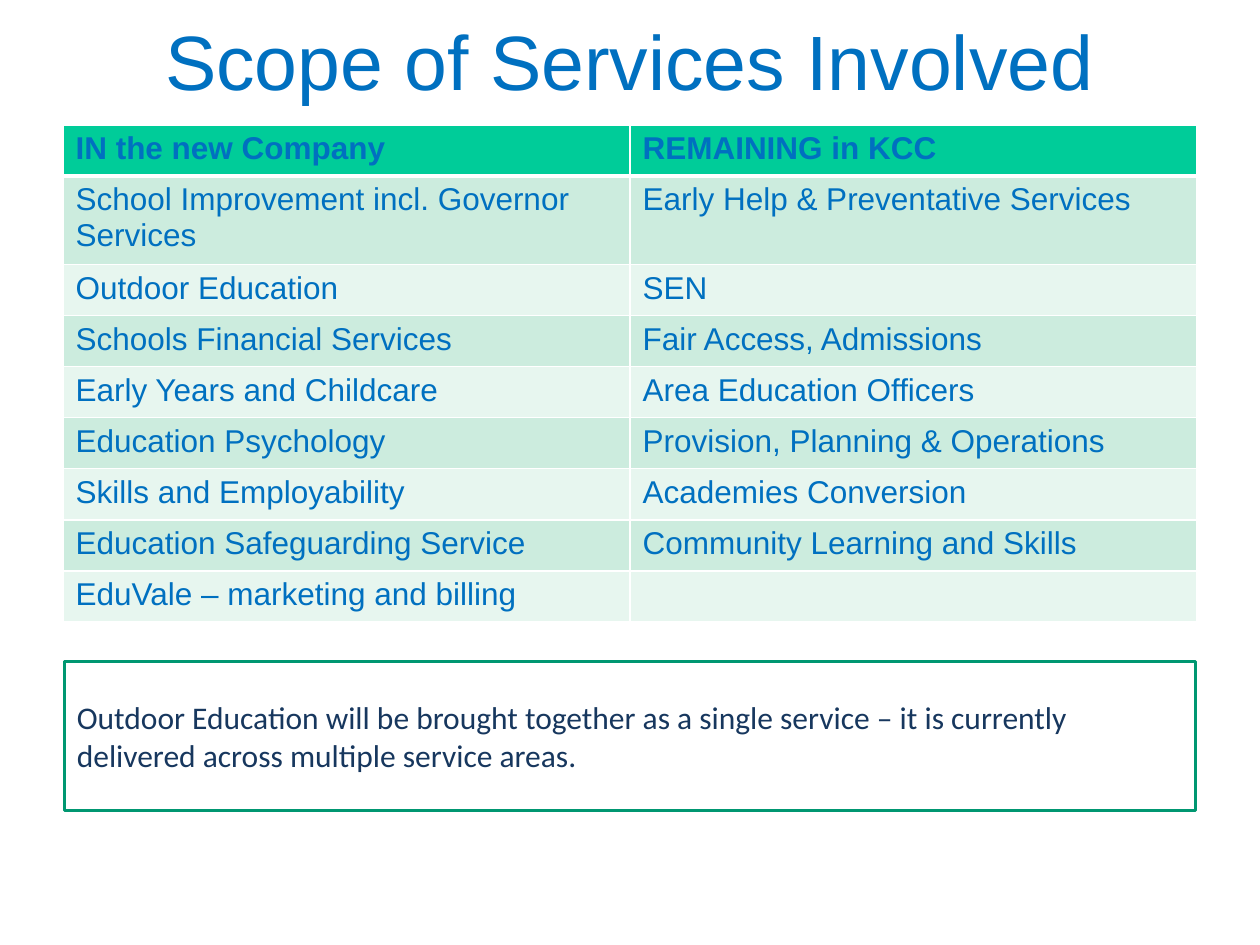
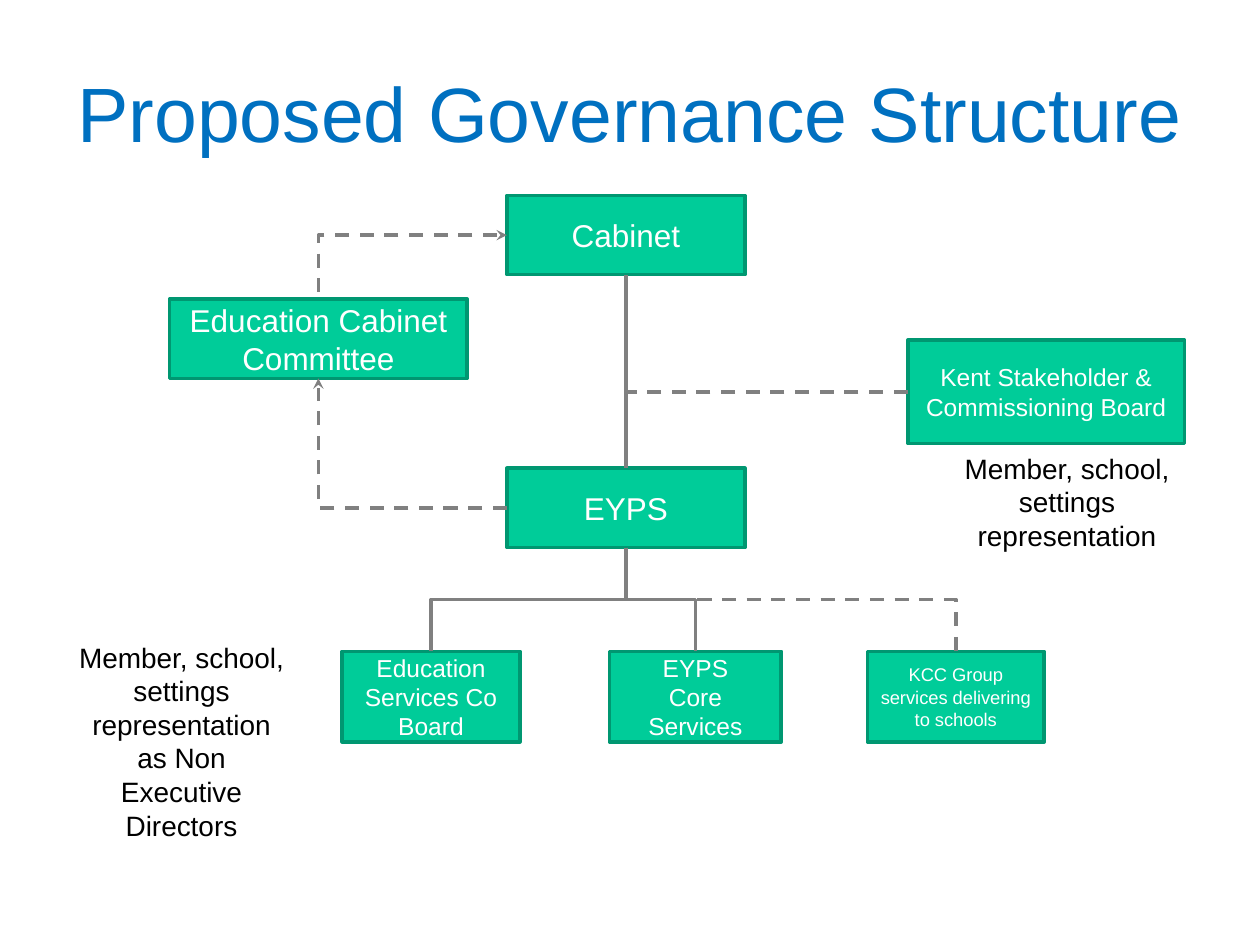
from lxml import etree
from pptx import Presentation
from pptx import util as u
from pptx.dml.color import RGBColor
from pptx.enum import dml, shapes, text
from pptx.oxml.ns import qn

rgb = RGBColor.from_string
BLUE, NAVY, BLACK, WHITE = "0070C0", "17375E", "000000", "FFFFFF"
GREEN, DARK_GREEN, GREY = "00CC99", "009771", "808080"
BANDS = ["CCECDE", "E7F6EF"]
LEFT, CENTRE = text.PP_ALIGN.LEFT, text.PP_ALIGN.CENTER
TOP, MIDDLE = text.MSO_ANCHOR.TOP, text.MSO_ANCHOR.MIDDLE


def write(frame, words, size=18, colour=BLUE, font="Arial", bold=False,
          align=CENTRE, anchor=MIDDLE, spacing=None):
    frame.word_wrap = True
    frame.vertical_anchor = anchor
    for number, line in enumerate(words.split("\n")):
        para = frame.add_paragraph() if number else frame.paragraphs[0]
        para.alignment = align
        para.line_spacing = spacing
        span = para.add_run()
        span.text = line
        span.font.name, span.font.size, span.font.bold = font, u.Pt(size), bold
        span.font.color.rgb = rgb(colour)


def add_box(page, left, top, width, height, fill=None):
    box = page.shapes.add_shape(shapes.MSO_SHAPE.RECTANGLE, u.Cm(left), u.Cm(top),
                                u.Cm(width), u.Cm(height))
    box.shadow.inherit = False
    if fill:
        box.fill.solid()
        box.fill.fore_color.rgb = rgb(fill)
    else:
        box.fill.background()
    box.line.color.rgb = rgb(DARK_GREEN)
    box.line.width = u.Pt(2)
    return box


deck = Presentation()
deck.slide_width, deck.slide_height = u.Cm(25.4), u.Cm(19.05)

# Pages and titles
pages = []
for title, top in [("Scope of Services Involved", -0.28),
                   ("Proposed Governance Structure", 0.76)]:
    page = deck.slides.add_slide(deck.slide_layouts[6])
    box = page.shapes.add_textbox(u.Cm(1.27), u.Cm(top), u.Cm(22.86), u.Cm(3.18))
    write(box.text_frame, title, size=44, spacing=0.93)
    pages.append(page)
scope_page, governance_page = pages

# Services table
services = [
    ("IN the new Company", "REMAINING in KCC"),
    ("School Improvement incl. Governor Services", "Early Help & Preventative Services"),
    ("Outdoor Education", "SEN"),
    ("Schools Financial Services", "Fair Access, Admissions"),
    ("Early Years and Childcare", "Area Education Officers"),
    ("Education Psychology", "Provision, Planning & Operations"),
    ("Skills and Employability", "Academies Conversion"),
    ("Education Safeguarding Service", "Community Learning and Skills"),
    ("EduVale – marketing and billing", ""),
]
table = scope_page.shapes.add_table(len(services), 2, u.Cm(1.27), u.Cm(2.52),
                                    u.Cm(22.86), u.Cm(1.03 * len(services))).table
table.horz_banding = False
for row, names in enumerate(services):
    header = row == 0
    for column, name in enumerate(names):
        cell = table.cell(row, column)
        if name:
            write(cell.text_frame, name, bold=header, align=LEFT, anchor=TOP)
        # White borders, heavier between header and body
        for side in "LRTB":
            heavy = (header and side == "B") or (row == 1 and side == "T")
            border = etree.SubElement(cell._tc.get_or_add_tcPr(), qn("a:ln" + side),
                                      w=str(u.Pt(3 if heavy else 1)))
            paint = etree.SubElement(border, qn("a:solidFill"))
            etree.SubElement(paint, qn("a:srgbClr"), val=WHITE)
        cell.fill.solid()
        cell.fill.fore_color.rgb = rgb(GREEN if header else BANDS[(row - 1) % 2])

# Note below the table
note = add_box(scope_page, 1.3, 13.34, 22.8, 3)
write(note.text_frame, "Outdoor Education will be brought together as a single service – "
      "it is currently delivered across multiple service areas.",
      colour=NAVY, font="Calibri", align=LEFT)

# Governance bodies
bodies = {}
for key, words, size, left, top, width, height in [
    ("cabinet", "Cabinet", 18, 10.22, 3.94, 4.8, 1.6),
    ("eyps", "EYPS", 18, 10.22, 9.44, 4.8, 1.6),
    ("committee", "Education Cabinet Committee", 18, 3.42, 6.03, 6, 1.6),
    ("stakeholders", "Kent Stakeholder & Commissioning Board", 14, 18.3, 6.86, 5.58, 2.08),
    ("company", "Education Services Co Board", 14, 6.9, 13.13, 3.58, 1.83),
    ("core", "EYPS\nCore Services", 14, 12.29, 13.13, 3.46, 1.83),
    ("group", "KCC Group services delivering to schools", 10.5, 17.49, 13.13, 3.56, 1.83),
]:
    bodies[key] = add_box(governance_page, left, top, width, height, fill=GREEN)
    write(bodies[key].text_frame, words, size=size, colour=WHITE)

# Connectors: corner turns once, fork leaves and arrives vertically
UP, SIDE, DOWN = 0, 1, 2
for start, start_site, end, end_site, form, dashed, arrow in [
    ("cabinet", DOWN, "eyps", UP, "straight", False, None),
    ("cabinet", SIDE, "committee", UP, "corner", True, "headEnd"),
    ("eyps", SIDE, "committee", DOWN, "corner", True, "tailEnd"),
    ("stakeholders", SIDE, "cabinet", DOWN, "corner", True, None),
    ("eyps", DOWN, "company", UP, "fork", False, None),
    ("eyps", DOWN, "core", UP, "fork", False, None),
    ("eyps", DOWN, "group", UP, "fork", True, None),
]:
    kind = shapes.MSO_CONNECTOR.STRAIGHT if form == "straight" else shapes.MSO_CONNECTOR.ELBOW
    link = governance_page.shapes.add_connector(kind, 0, 0, 0, 0)
    link.begin_connect(bodies[start], start_site)
    link.end_connect(bodies[end], end_site)
    link.line.color.rgb = rgb(GREY)
    link.line.width = u.Pt(2)
    if dashed:
        link.line.dash_style = dml.MSO_LINE.DASH
    properties = link._element.spPr
    if arrow:
        etree.SubElement(properties.find(qn("a:ln")), qn("a:" + arrow), type="stealth")
    etree.SubElement(properties, qn("a:effectLst"))
    if form == "corner":
        properties.find(qn("a:prstGeom")).set("prst", "bentConnector2")
    elif form == "fork":
        # A quarter turn about the centre swaps width and height
        to_right = link.end_x > link.begin_x
        width, height = link.width, link.height
        link.left += (width - height) // 2
        link.top += (height - width) // 2
        link.width, link.height = height, width
        frame = properties.find(qn("a:xfrm"))
        frame.set("rot", "16200000" if to_right else "5400000")
        frame.set("flipH", "1" if to_right else "0")

# Representation notes
for words, left, top, height in [
    ("Member, school, settings representation", 19.15, 8.97, 2.31),
    ("Member, school, settings representation as Non Executive Directors", 1.3, 12.78, 4.37),
]:
    box = governance_page.shapes.add_textbox(u.Cm(left), u.Cm(top), u.Cm(4.72), u.Cm(height))
    write(box.text_frame, words, size=16, colour=BLACK, anchor=TOP)

deck.save("out.pptx")
